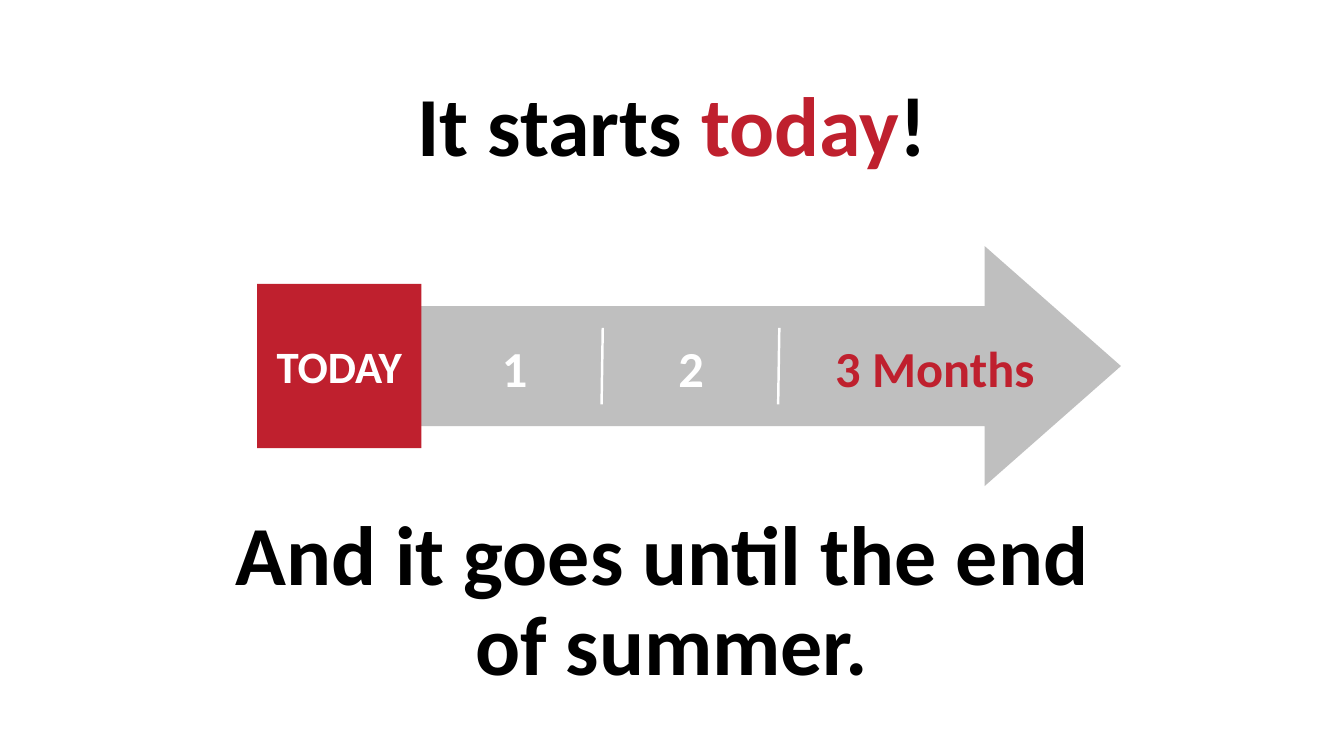
from lxml import etree
from pptx import Presentation
from pptx.dml.color import RGBColor
from pptx.enum.shapes import MSO_CONNECTOR as Conn, MSO_SHAPE as Shape
from pptx.enum.text import MSO_ANCHOR as Anchor, MSO_AUTO_SIZE as Auto, PP_ALIGN as Align
from pptx.oxml.ns import qn
from pptx.util import Cm, Pt

RED, GRAY, WHITE, BLACK = "BF202E", "BFBFBF", "FFFFFF", "000000"


def color(code):
    return RGBColor.from_string(code)


def style(run, size, code):
    font = run.font
    font.name, font.size, font.bold = "Calibri", Pt(size), True
    font.color.rgb = color(code)


def write(shape, lines, size, space=1.0):
    """Fill a shape with lines, each a list of (text, colour) parts."""
    frame = shape.text_frame
    frame.word_wrap = True
    frame.auto_size = Auto.NONE
    frame.vertical_anchor = Anchor.MIDDLE
    for i, parts in enumerate(lines):
        para = frame.add_paragraph() if i else frame.paragraphs[0]
        para.alignment = Align.CENTER
        para.line_spacing = space
        para.space_before = Pt(0)
        for text, code in parts:
            run = para.add_run()
            run.text = text
            style(run, size, code)


def block(slide, kind, x, y, w, h, code):
    shape = slide.shapes.add_shape(kind, Cm(x), Cm(y), Cm(w), Cm(h))
    shape.shadow.inherit = False
    shape.fill.solid()
    shape.fill.fore_color.rgb = color(code)
    shape.line.fill.background()
    return shape


def label(slide, x, y, w, h, lines, size, space=1.0):
    box = slide.shapes.add_textbox(Cm(x), Cm(y), Cm(w), Cm(h))
    write(box, lines, size, space)


def tick(slide, x, y):
    line = slide.shapes.add_connector(Conn.STRAIGHT, Cm(x), Cm(y), Cm(x - 0.03), Cm(y + 1.93))
    line.line.color.rgb = color(WHITE)
    line.line.width = Pt(1.75)
    etree.SubElement(line._element.spPr, qn("a:effectLst"))


def title(slide, x, y, w, h):
    head = slide.shapes.title
    head.left, head.top, head.width, head.height = Cm(x), Cm(y), Cm(w), Cm(h)
    write(head, [[("It starts ", BLACK), ("today", RED), ("!", BLACK)]], 60, 0.9)


def timeline(slide, x, y, w, h):
    side, step = 4.14, 4.45
    start = 3.91
    arrow = block(slide, Shape.RIGHT_ARROW, x + start, y, w - start, h, GRAY)
    arrow.adjustments[0], arrow.adjustments[1] = 0.5, 0.568
    today = block(slide, Shape.RECTANGLE, x, y + (h - side) / 2, side, side, RED)
    write(today, [[("TODAY", WHITE)]], 32)
    for i, month in enumerate(("1", "2")):
        left = x + i * step
        label(slide, left + 4.47, y + 2.16, 4.04, 1.8, [[(month, WHITE)]], 36)
        tick(slide, left + 8.71, y + 2.06)
    label(slide, x + 13.79, y + 2.16, 6.58, 1.8, [[("3 Months", RED)]], 36)


def closing(slide, x, y, w, h):
    lines = [[("And it goes until the end ", BLACK)], [("of summer.", BLACK)]]
    label(slide, x, y, w, h, lines, 60, 0.9)


def main():
    deck = Presentation()
    deck.slide_width, deck.slide_height = Cm(33.87), Cm(19.05)
    slide = deck.slides.add_slide(deck.slide_layouts[5])
    title(slide, 4.24, 1.91, 25.4, 2.72)
    timeline(slide, 6.48, 6.2, 21.77, 6.05)
    closing(slide, 1.75, 13.84, 30.35, 2.72)
    deck.save("out.pptx")


if __name__ == "__main__":
    main()
